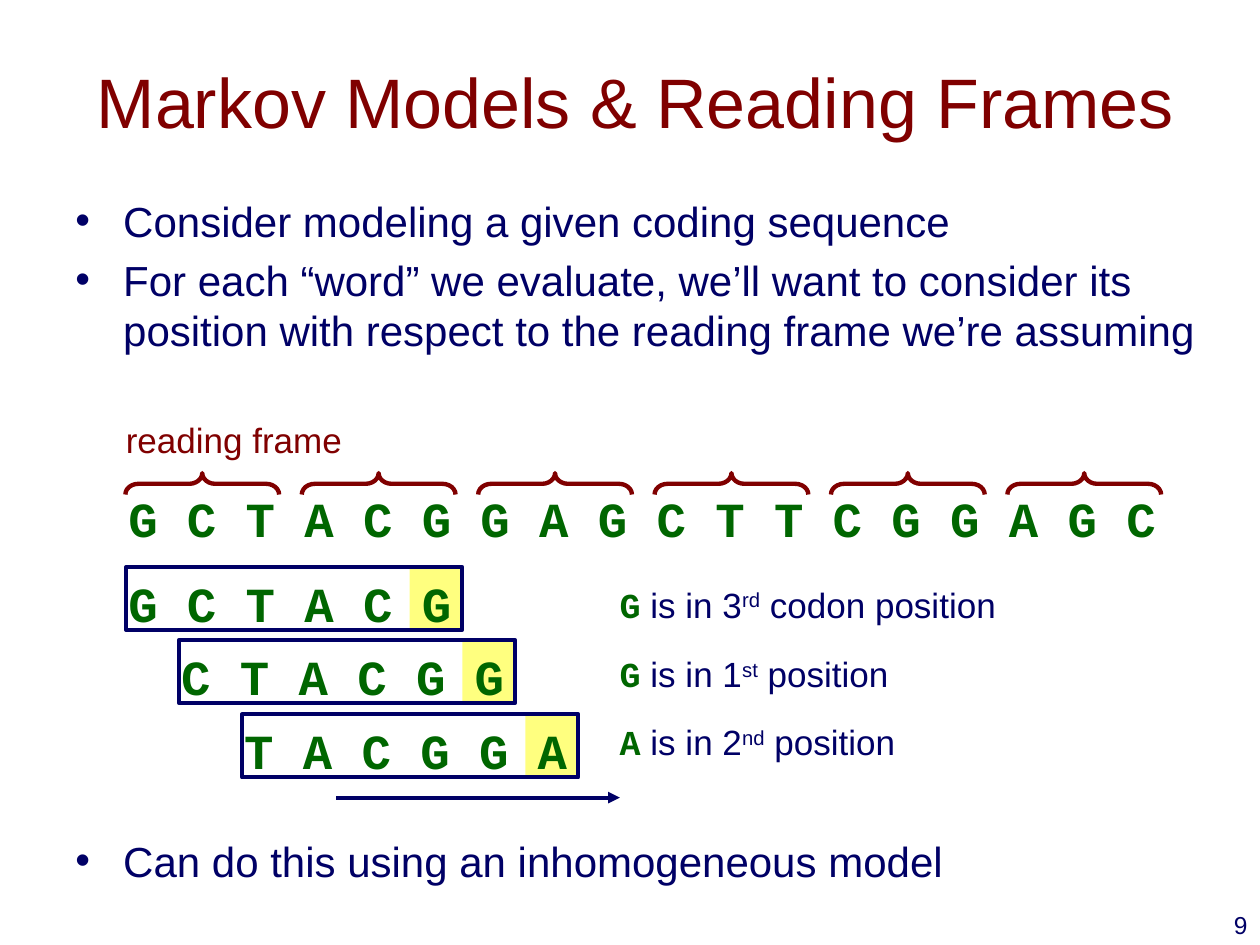
from lxml import etree
from pptx import Presentation
from pptx.dml.color import RGBColor
from pptx.enum.shapes import MSO_CONNECTOR, MSO_SHAPE
from pptx.enum.text import MSO_ANCHOR, MSO_AUTO_SIZE, PP_ALIGN
from pptx.oxml.ns import qn
from pptx.util import Inches, Pt

RED = RGBColor(0x80, 0x00, 0x00)
NAVY = RGBColor(0x00, 0x00, 0x66)
GREEN = RGBColor(0x00, 0x66, 0x00)
YELLOW = RGBColor(0xFF, 0xFF, 0x00)
SANS, MONO = "Arial", "Courier New"
RECT, BRACE = MSO_SHAPE.RECTANGLE, MSO_SHAPE.LEFT_BRACE
STRAIGHT = MSO_CONNECTOR.STRAIGHT
LEFT, CENTER, RIGHT = PP_ALIGN.LEFT, PP_ALIGN.CENTER, PP_ALIGN.RIGHT
TOP, MIDDLE = MSO_ANCHOR.TOP, MSO_ANCHOR.MIDDLE
GROW, FIXED = MSO_AUTO_SIZE.SHAPE_TO_FIT_TEXT, MSO_AUTO_SIZE.NONE


class Deck:
    def __init__(self):
        self.prs = Presentation()
        self.prs.slide_width, self.prs.slide_height = Inches(10), Inches(7.5)
        self.slide = self.prs.slides.add_slide(self.prs.slide_layouts[6])
        self.shapes = self.slide.shapes

    def style(self, font, size, color, name=SANS, bold=False):
        font.size, font.name, font.bold = Pt(size), name, bold
        font.color.rgb = color

    def frame(self, box, wrap=True, anchor=TOP):
        frame = self.shapes.add_textbox(*map(Inches, box)).text_frame
        frame.word_wrap = wrap
        frame.auto_size = FIXED if wrap else GROW
        frame.vertical_anchor = anchor
        return frame

    def text(self, box, text, size, color, name=SANS, bold=False,
             align=LEFT, wrap=False, anchor=TOP):
        par = self.frame(box, wrap, anchor).paragraphs[0]
        par.text, par.alignment = text, align
        self.style(par.font, size, color, name, bold)

    def bullets(self, box, lines):
        frame = self.frame(box)
        for i, line in enumerate(lines):
            par = frame.add_paragraph() if i else frame.paragraphs[0]
            par.text, par.space_before = line, Pt(5)
            self.style(par.font, 24, NAVY)
            props = par._p.get_or_add_pPr()
            props.set("marL", str(Inches(0.38)))
            props.set("indent", str(-Inches(0.38)))
            last = props.find(qn("a:defRPr"))
            last.addprevious(etree.Element(qn("a:buFont"), typeface=SANS))
            last.addprevious(etree.Element(qn("a:buChar"), char="•"))

    def note(self, box, base, start, suffix, end):
        par = self.frame(box, wrap=False).paragraphs[0]
        for i, part in enumerate((base, start, suffix, end)):
            run = par.add_run()
            run.text = part
            if i == 0:
                self.style(run.font, 20, GREEN, MONO, True)
            else:
                self.style(run.font, 20, NAVY)
            if i == 2:
                run._r.get_or_add_rPr().set("baseline", "30000")

    def shape(self, kind, box, line=None, width=2.25):
        shape = self.shapes.add_shape(kind, *map(Inches, box))
        shape.shadow.inherit = False
        shape.fill.background()
        if line is None:
            shape.line.fill.background()
        else:
            shape.line.color.rgb, shape.line.width = line, Pt(width)
        return shape

    def brace(self, box):
        brace = self.shape(BRACE, box, RED, 2.5)
        brace.rotation = 90
        brace.adjustments[0] = 0.608

    def glow(self, box):
        fill = self.shape(RECT, box).fill
        fill.solid()
        fill.fore_color.rgb = YELLOW
        color = fill._xPr.find(qn("a:solidFill"))[0]
        etree.SubElement(color, qn("a:alpha"), val="50000")

    def arrow(self, x1, y1, x2, y2):
        line = self.shapes.add_connector(STRAIGHT, *map(Inches, (x1, y1, x2, y2)))
        line.line.color.rgb, line.line.width = NAVY, Pt(2.25)
        etree.SubElement(line.line._get_or_add_ln(), qn("a:tailEnd"), type="triangle")
        etree.SubElement(line._element.spPr, qn("a:effectLst"))


def main():
    deck = Deck()

    # Title and opening points
    deck.text((0.58, 0.17, 8.92, 1.25), "Markov Models & Reading Frames", 40, RED,
              align=CENTER, wrap=True, anchor=MIDDLE)
    deck.bullets((0.5, 1.5, 9.17, 1.83), [
        "Consider modeling a given coding sequence",
        "For each “word” we evaluate, we’ll want to consider its position "
        "with respect to the reading frame we’re assuming",
    ])

    # Full sequence with one brace per codon
    deck.text((0.9, 3.27, 2.1, 0.43), "reading frame", 20, RED, wrap=True)
    for i in range(6):
        deck.brace((1.52 + 1.4 * i, 3.23, 0.17, 1.22))
    deck.text((0.92, 3.83, 8.37, 0.57), " ".join("GCTACGGAGCTTCGGAGC"),
              28, GREEN, MONO, True)

    # Sliding words, the last base marked, each with its note
    words = [
        (1, 4.5, "GCTACG", 4.58, 3.2, "3", "rd", " codon position"),
        (1.42, 5.08, "CTACGG", 5.13, 2.35, "1", "st", " position"),
        (1.92, 5.67, "TACGGA", 5.67, 2.41, "2", "nd", " position"),
    ]
    for x, y, word, top, wide, digit, suffix, end in words:
        deck.glow((x + 2.25, y, 0.42, 0.5))
        deck.shape(RECT, (x, y, 2.67, 0.5), NAVY)
        deck.text((x - 0.08, y, 2.77, 0.57), " ".join(word), 28, GREEN, MONO, True)
        deck.note((4.82, top, wide, 0.43), word[-1], " is in " + digit, suffix, end)
    deck.arrow(2.67, 6.33, 4.92, 6.33)

    # Closing point and slide number
    deck.bullets((0.5, 6.58, 8.5, 0.8), ["Can do this using an inhomogeneous model"])
    deck.text((7.92, 7.17, 2.08, 0.33), "9", 14, NAVY, align=RIGHT, wrap=True)

    deck.prs.save("out.pptx")


if __name__ == "__main__":
    main()
